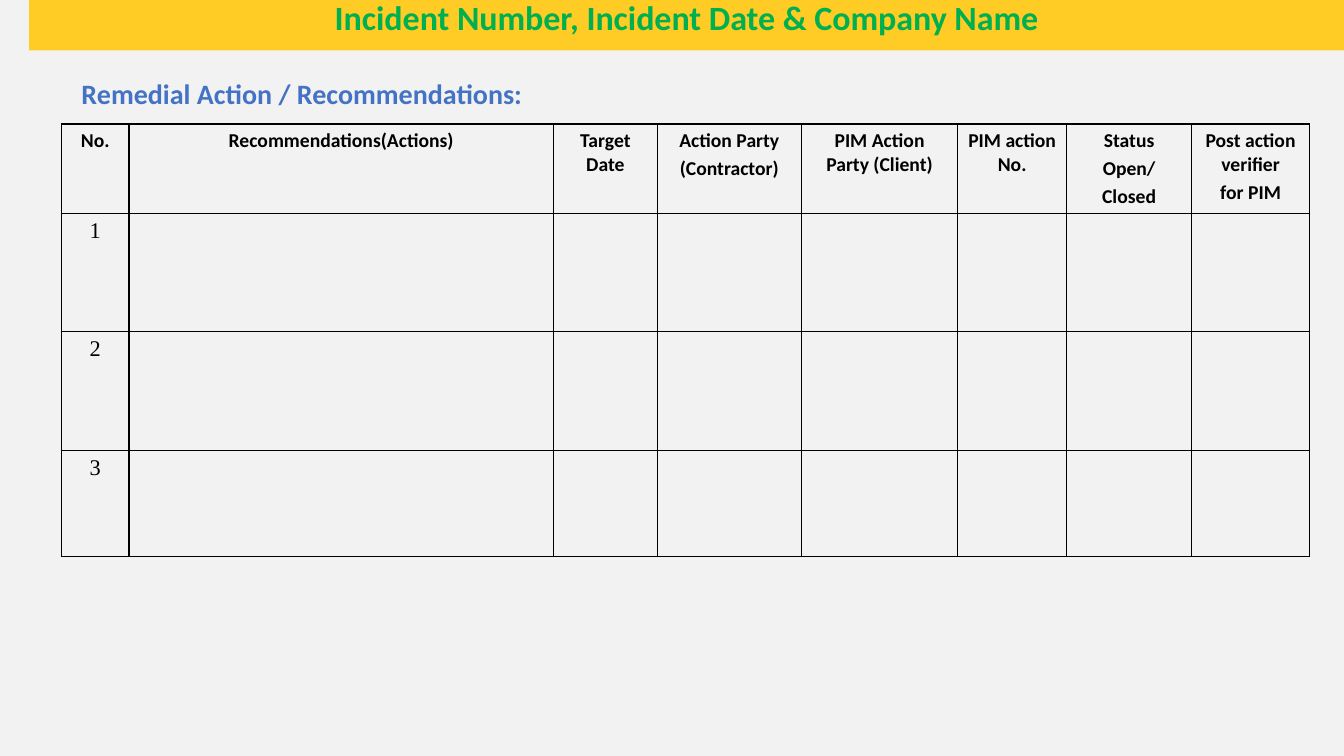
from dataclasses import dataclass

from lxml.etree import SubElement
from pptx import Presentation
from pptx.dml.color import RGBColor
from pptx.enum.shapes import MSO_SHAPE as Preset
from pptx.enum.text import MSO_ANCHOR as Anchor, PP_ALIGN as Align
from pptx.oxml.ns import qn
from pptx.slide import Slide
from pptx.table import _Cell as Cell
from pptx.text.text import TextFrame
from pptx.util import Inches, Pt

BACKGROUND = RGBColor(0xF2, 0xF2, 0xF2)
YELLOW = RGBColor(0xFF, 0xCB, 0x25)
GREEN = RGBColor(0x00, 0xB0, 0x50)
BLUE = RGBColor(0x44, 0x72, 0xC4)
BLACK = RGBColor(0x00, 0x00, 0x00)


@dataclass(frozen=True)
class TextStyle:
    size: float
    color: RGBColor
    bold: bool = True
    font: str = "Calibri"
    align: Align = Align.CENTER


@dataclass(frozen=True)
class Column:
    width: float
    heading: tuple[str, ...]


TITLE = TextStyle(24.3, GREEN)
SECTION = TextStyle(20, BLUE, align=Align.LEFT)
HEADING = TextStyle(14, BLACK)
NUMBER = TextStyle(16, BLACK, bold=False, font="Times New Roman")

COLUMNS = (
    Column(0.67, ("No.",)),
    Column(4.21, ("Recommendations(Actions)",)),
    Column(1.03, ("Target Date",)),
    Column(1.43, ("Action Party", "(Contractor)")),
    Column(1.55, ("PIM Action Party (Client)",)),
    Column(1.08, ("PIM action No.",)),
    Column(1.24, ("Status", "Open/", "Closed")),
    Column(1.17, ("Post action verifier", "for PIM")),
)
ROW_HEIGHTS = (0.89, 1.17, 1.18, 1.05)


def write(frame: TextFrame, lines: tuple[str, ...], style: TextStyle) -> None:
    frame.word_wrap = True
    for index, line in enumerate(lines):
        paragraph = frame.add_paragraph() if index else frame.paragraphs[0]
        paragraph.alignment = style.align
        if index:
            paragraph.space_before = Pt(style.size * 0.2)
        run = paragraph.add_run()
        run.text = line
        run.font.name = style.font
        run.font.size = Pt(style.size)
        run.font.bold = style.bold
        run.font.color.rgb = style.color


def outline(cell: Cell) -> None:
    cell.fill.background()
    properties = cell._tc.get_or_add_tcPr()
    for position, side in enumerate(("a:lnL", "a:lnR", "a:lnT", "a:lnB")):
        border = SubElement(properties, qn(side), w=str(Pt(1)))
        solid = SubElement(border, qn("a:solidFill"))
        SubElement(solid, qn("a:srgbClr"), val=str(BLACK))
        properties.insert(position, border)


def add_title(slide: Slide) -> None:
    band = slide.shapes.add_shape(
        Preset.RECTANGLE, Inches(0.29), Inches(0), Inches(13.04), Inches(0.5))
    band.shadow.inherit = False
    band.fill.solid()
    band.fill.fore_color.rgb = YELLOW
    band.line.fill.background()
    frame = band.text_frame
    frame.vertical_anchor = Anchor.MIDDLE
    frame.margin_top = Inches(0)
    frame.margin_bottom = Inches(0.16)
    write(frame, ("Incident Number, Incident Date & Company Name",), TITLE)


def add_section_heading(slide: Slide) -> None:
    heading = slide.shapes.add_textbox(
        Inches(0.71), Inches(0.71), Inches(5.21), Inches(0.45))
    write(heading.text_frame, ("Remedial Action / Recommendations:",), SECTION)


def add_actions(slide: Slide) -> None:
    actions = slide.shapes.add_table(
        len(ROW_HEIGHTS), len(COLUMNS), Inches(0.61), Inches(1.23),
        Inches(sum(column.width for column in COLUMNS)),
        Inches(sum(ROW_HEIGHTS))).table
    actions.first_row = False
    actions.horz_banding = False
    for row, height in zip(actions.rows, ROW_HEIGHTS):
        row.height = Inches(height)
    for index, column in enumerate(COLUMNS):
        actions.columns[index].width = Inches(column.width)
        write(actions.cell(0, index).text_frame, column.heading, HEADING)
    for number in range(1, len(ROW_HEIGHTS)):
        write(actions.cell(number, 0).text_frame, (str(number),), NUMBER)
    for cell in actions.iter_cells():
        outline(cell)


def main() -> None:
    deck = Presentation()
    deck.slide_width = Inches(13.33)
    deck.slide_height = Inches(7.5)
    slide = deck.slides.add_slide(deck.slide_layouts[6])
    slide.background.fill.solid()
    slide.background.fill.fore_color.rgb = BACKGROUND
    add_title(slide)
    add_section_heading(slide)
    add_actions(slide)
    deck.save("out.pptx")


if __name__ == "__main__":
    main()
